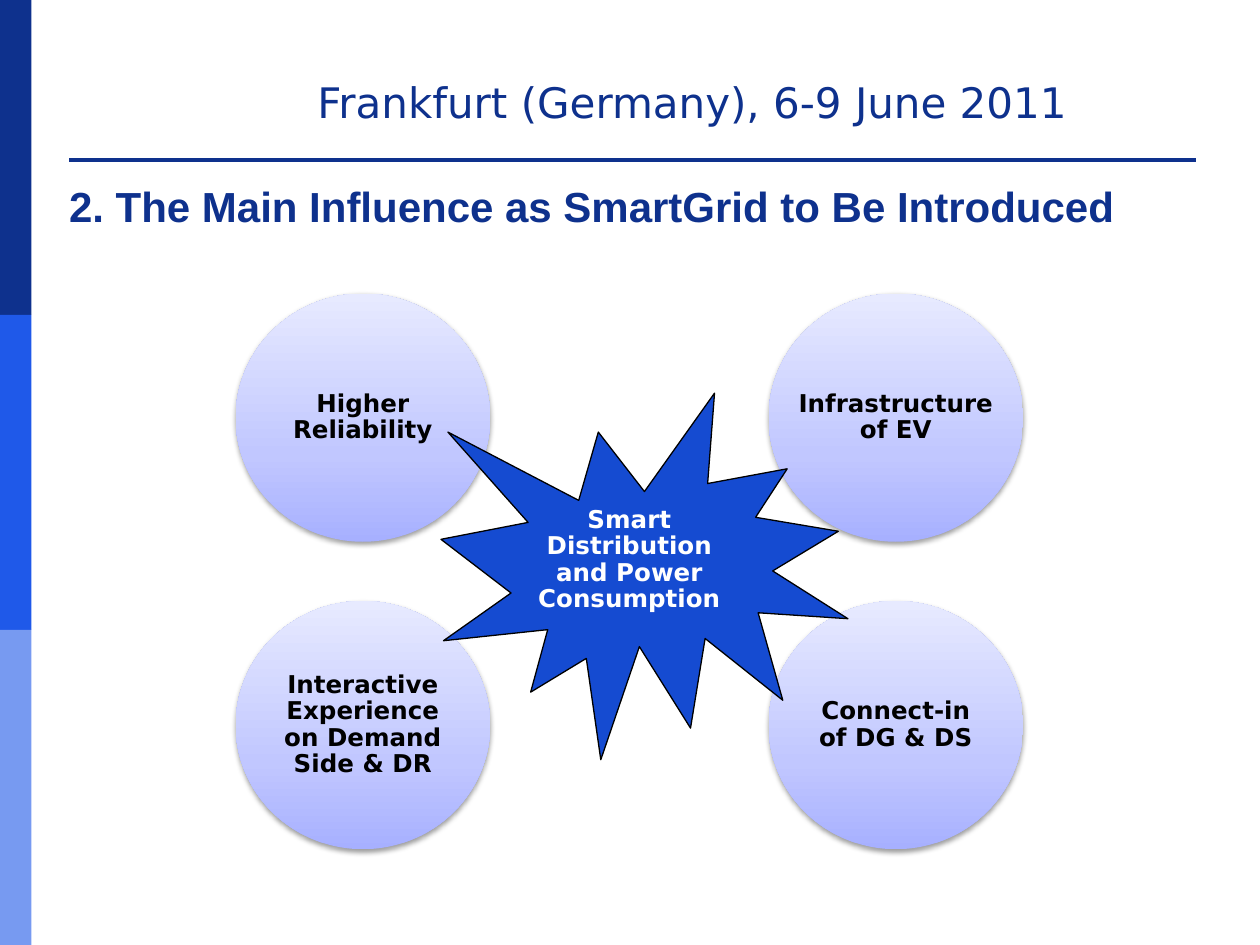
import copy

import pptx
import pptx.dml.color
import pptx.enum.shapes
import pptx.enum.text
import pptx.oxml
import pptx.oxml.ns
import pptx.util
from pptx.util import Inches

RGBColor = pptx.dml.color.RGBColor
MSO_SHAPE = pptx.enum.shapes.MSO_SHAPE
MSO_ANCHOR = pptx.enum.text.MSO_ANCHOR
PP_ALIGN = pptx.enum.text.PP_ALIGN
qn = pptx.oxml.ns.qn

NAVY = RGBColor(0x0E, 0x31, 0x8D)
BLUE = RGBColor(0x1F, 0x59, 0xE9)
SKY = RGBColor(0x77, 0x9A, 0xF1)
BURST_BLUE = RGBColor(0x15, 0x4B, 0xD1)
BLACK = RGBColor(0, 0, 0)
WHITE = RGBColor(0xFF, 0xFF, 0xFF)
CIRCLE_STOPS = [
    (0, RGBColor(0xA7, 0xB0, 0xFF)),
    (0.35, RGBColor(0xC1, 0xC7, 0xFF)),
    (1, RGBColor(0xE7, 0xEA, 0xFF)),
]
NSMAP = 'xmlns:a="http://schemas.openxmlformats.org/drawingml/2006/main"'


def add_shape(slide, kind, left, top, width, height):
    shape = slide.shapes.add_shape(kind, left, top, width, height)
    shape.shadow.inherit = False
    shape.line.fill.background()
    return shape


def add_text(slide, box, text, size, font, color, bold=False):
    frame = slide.shapes.add_textbox(*box).text_frame
    frame.word_wrap = True
    run = frame.paragraphs[0].add_run()
    run.text = text
    run.font.size = pptx.util.Pt(size)
    run.font.name = font
    run.font.bold = bold
    run.font.color.rgb = color
    return frame


def add_label(slide, box, text, color):
    frame = add_text(slide, box, text, 14, "DejaVu Sans", color, bold=True)
    frame.vertical_anchor = MSO_ANCHOR.MIDDLE
    frame.margin_left = frame.margin_right = Inches(0.02)
    frame.margin_top = frame.margin_bottom = Inches(0.02)
    paragraph = frame.paragraphs[0]
    paragraph.alignment = PP_ALIGN.CENTER
    paragraph.line_spacing = 0.9


def add_side_band(slide, left, top, width, height):
    colors = [NAVY, BLUE, SKY]
    part_height = height // len(colors)
    for index, color in enumerate(colors):
        part = add_shape(slide, MSO_SHAPE.RECTANGLE, left,
                         top + index * part_height, width, part_height)
        part.fill.solid()
        part.fill.fore_color.rgb = color


def add_header_rule(slide, left, top, width, height):
    table = slide.shapes.add_table(1, 1, left, top, width, height).table
    table.first_row = table.horz_banding = False
    cell = table.cell(0, 0)
    cell.margin_left = cell.margin_right = 0
    cell.margin_top = cell.margin_bottom = 0
    cell.fill.background()
    cell.text_frame.paragraphs[0]._p.append(
        pptx.oxml.parse_xml(f'<a:endParaRPr {NSMAP} sz="400"/>'))
    border = pptx.oxml.parse_xml(
        f'<a:lnB {NSMAP} w="{pptx.util.Pt(2.25)}"><a:solidFill>'
        f'<a:srgbClr val="{NAVY}"/></a:solidFill></a:lnB>')
    cell._tc.get_or_add_tcPr().insert(0, border)


def add_header(slide, left, top, width, height):
    add_header_rule(slide, left, top + Inches(0.51), width, Inches(0.2))
    venue_left = Inches(2.42)
    venue_box = (venue_left, top, Inches(9) - venue_left, height)
    add_text(slide, venue_box, "Frankfurt (Germany), 6-9 June 2011",
             24, "DejaVu Sans", NAVY)


def add_title(slide, *box):
    frame = add_text(slide, box,
                     "2. The Main Influence as SmartGrid to Be Introduced",
                     24, "Arial", NAVY, bold=True)
    frame.vertical_anchor = MSO_ANCHOR.MIDDLE


def style_circle(circle):
    circle.fill.gradient()
    circle.fill.gradient_angle = 90
    properties = circle._element.spPr
    stop_list = properties.find(qn("a:gradFill")).find(qn("a:gsLst"))
    stop_list.append(copy.deepcopy(stop_list[-1]))
    for stop, (position, color) in zip(circle.fill.gradient_stops, CIRCLE_STOPS):
        stop.position = position
        stop.color.rgb = color
    properties.find(qn("a:effectLst")).append(pptx.oxml.parse_xml(
        f'<a:outerShdw {NSMAP} blurRad="{pptx.util.Pt(3.1)}" '
        f'dist="{pptx.util.Pt(1.6)}" dir="5400000" rotWithShape="0">'
        f'<a:srgbClr val="{BLACK}"><a:alpha val="38000"/></a:srgbClr></a:outerShdw>'))


def add_circle(slide, left, top, width, height, text, label_width):
    style_circle(add_shape(slide, MSO_SHAPE.OVAL, left, top, width, height))
    label_height = Inches(1.39)
    label_box = (left + (width - label_width) // 2,
                 top + (height - label_height) // 2, label_width, label_height)
    add_label(slide, label_box, text, BLACK)


def add_influences(slide, left, top, width, height):
    circle_width, circle_height = Inches(2.02), Inches(1.97)
    influences = [
        ("Interactive Experience on Demand Side & DR", 0, 1, 1.43),
        ("Higher Reliability", 0, 0, 1.43),
        ("Connect-in of DG & DS", 1, 1, 1.43),
        ("Infrastructure of EV", 1, 0, 1.65),
    ]
    for text, column, row, label_width in influences:
        add_circle(slide, left + column * (width - circle_width),
                   top + row * (height - circle_height),
                   circle_width, circle_height, text, Inches(label_width))


def add_burst(slide, left, top, width, height):
    burst = add_shape(slide, MSO_SHAPE.EXPLOSION1, left, top, width, height)
    burst.fill.solid()
    burst.fill.fore_color.rgb = BURST_BLUE
    burst.line.color.rgb = BLACK
    burst.line.width = pptx.util.Pt(0.75)
    label_box = (left + Inches(0.71), top + Inches(0.63), Inches(1.57), Inches(1.39))
    add_label(slide, label_box, "Smart Distribution and Power Consumption", WHITE)


def main():
    presentation = pptx.Presentation()
    presentation.slide_width = Inches(10)
    presentation.slide_height = Inches(7.5)
    slide = presentation.slides.add_slide(presentation.slide_layouts[6])
    add_side_band(slide, 0, 0, Inches(0.25), presentation.slide_height)
    add_header(slide, Inches(0.54), Inches(0.56), Inches(8.96), Inches(0.5))
    add_title(slide, Inches(0.45), Inches(1.31), Inches(9), Inches(0.65))
    add_influences(slide, Inches(1.87), Inches(2.33), Inches(6.25), Inches(4.41))
    add_burst(slide, Inches(3.5), Inches(3.12), Inches(3.23), Inches(2.91))
    presentation.save("out.pptx")


if __name__ == "__main__":
    main()
